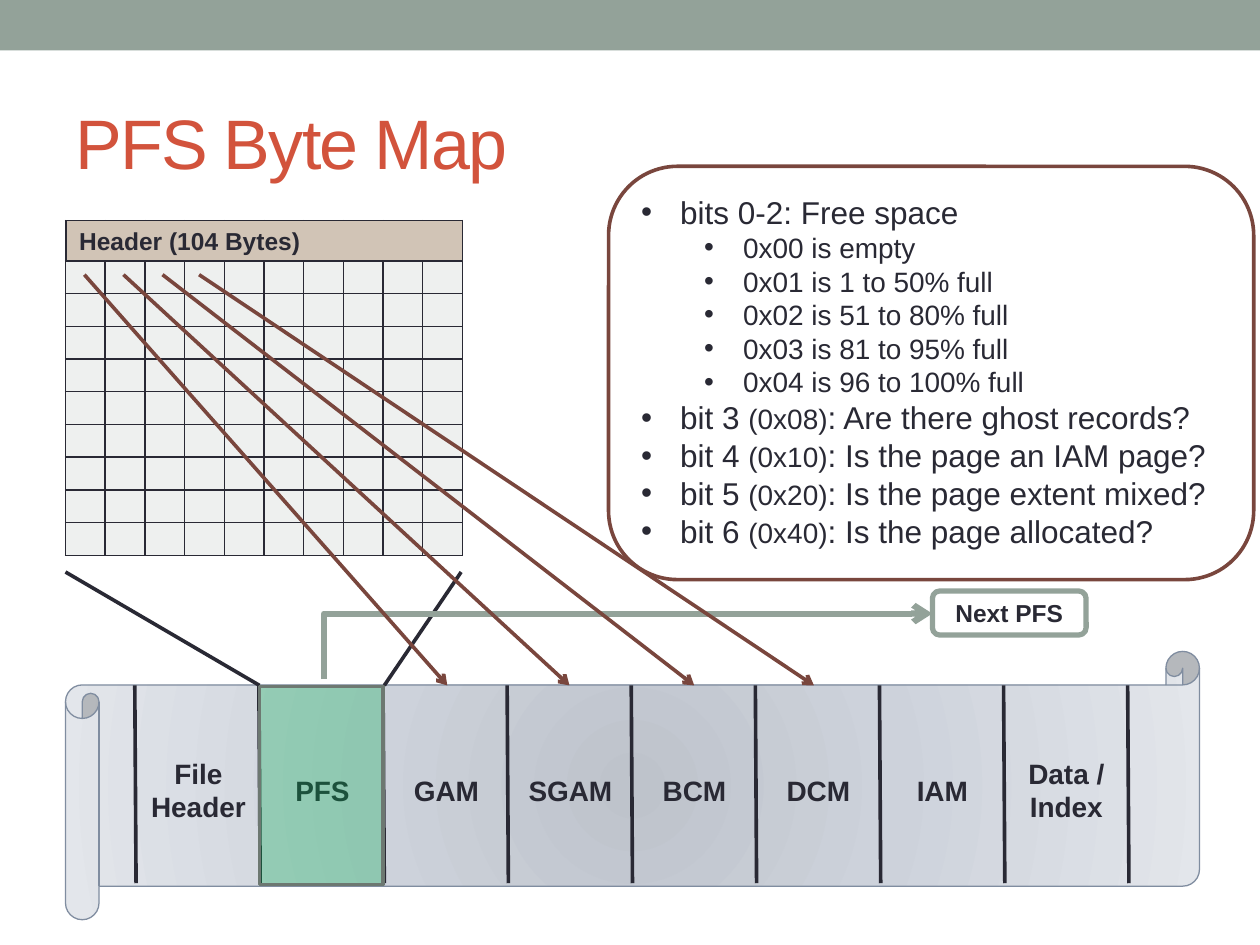
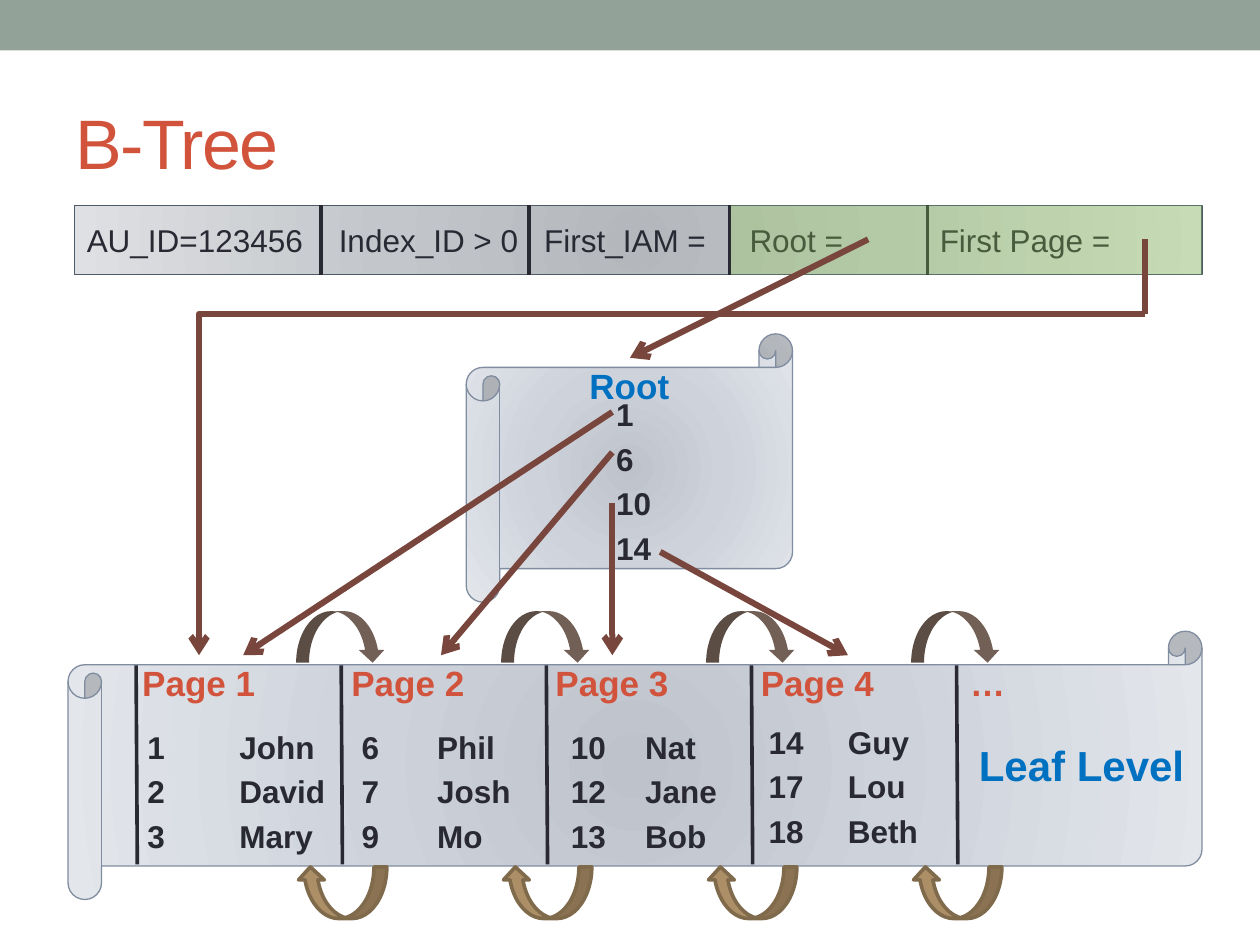
from lxml import etree
from pptx import Presentation
from pptx.dml.color import RGBColor
from pptx.enum.shapes import MSO_CONNECTOR, MSO_SHAPE
from pptx.enum.text import MSO_ANCHOR, PP_ALIGN
from pptx.oxml import parse_xml
from pptx.oxml.ns import nsdecls, qn
from pptx.util import Inches, Pt

STRAIGHT, ELBOW = MSO_CONNECTOR.STRAIGHT, MSO_CONNECTOR.ELBOW
RECT, ROUNDED = MSO_SHAPE.RECTANGLE, MSO_SHAPE.ROUNDED_RECTANGLE
SCROLL, CURVED_ARROW = MSO_SHAPE.HORIZONTAL_SCROLL, MSO_SHAPE.CURVED_DOWN_ARROW
LEFT, CENTER = PP_ALIGN.LEFT, PP_ALIGN.CENTER
TOP, MIDDLE = MSO_ANCHOR.TOP, MSO_ANCHOR.MIDDLE

FONT = "Arial"
INK, SAGE, RUST, BROWN = "292934", "93A299", "D2533C", "79463D"
BLUE, WHITE = "0070C0", "FFFFFF"
SCROLL_TINTS = ("BEC3CB", "CDD2DB", "E3E6EB")
RECORD_TINTS = ("B4B7BC", "C3C7CB", "DFE0E3")
NO_GRID_STYLE = "{2D5ABB26-0587-4C30-8999-92F81FD0307C}"

rgb = RGBColor.from_string


def write(paragraph, text, size, color=INK, bold=False):
    """Add one run to the paragraph."""
    run = paragraph.add_run()
    run.text = text
    run.font.name = FONT
    run.font.size = Pt(size)
    run.font.bold = bold
    run.font.color.rgb = rgb(color)
    return run


def connect(slide, start, end, color, width=2.08, arrow=False, kind=STRAIGHT):
    connector = slide.shapes.add_connector(kind, *map(Inches, start + end))
    connector.line.color.rgb = rgb(color)
    connector.line.width = Pt(width)
    if arrow:
        etree.SubElement(connector.get_or_add_ln(), qn("a:tailEnd"), type="arrow")
    etree.SubElement(connector.element.spPr, qn("a:effectLst"))
    return connector


prs = Presentation()
prs.slide_width, prs.slide_height = Inches(10), Inches(7.5)
title_only = prs.slide_layouts[5]

# Titles
slides = []
for heading in ("PFS Byte Map", "B-Tree"):
    slide = prs.slides.add_slide(title_only)
    title = slide.shapes.title
    title.left, title.top = Inches(0.5), Inches(0.58)
    title.width, title.height = Inches(9), Inches(1.08)
    title.text_frame.vertical_anchor = MIDDLE
    paragraph = title.text_frame.paragraphs[0]
    paragraph.alignment = LEFT
    run = write(paragraph, heading, 40, RUST)
    run._r.get_or_add_rPr().set("spc", "-100")
    slides.append(slide)
byte_map, b_tree = slides

# Top band, moved to the shared layout
band = byte_map.shapes.add_shape(RECT, 0, 0, Inches(10), Inches(0.4))
band.shadow.inherit = False
band.fill.solid()
band.fill.fore_color.rgb = rgb(SAGE)
band.line.fill.background()
title_only.shapes.element.insert(2, band.element)

# Scrolls and the allocation record, shaded from the centre
shaded = []
for slide, kind, at, tints, edge in (
    (byte_map, SCROLL, (0.52, 5.17, 9, 2.13), SCROLL_TINTS, "808DA0"),
    (b_tree, SCROLL, (0.54, 5.01, 9, 2.13), SCROLL_TINTS, "808DA0"),
    (b_tree, SCROLL, (3.7, 2.65, 2.59, 2.13), SCROLL_TINTS, "808DA0"),
    (b_tree, RECT, (0.59, 1.63, 8.95, 0.55), RECORD_TINTS, "4C5A6A"),
):
    shape = slide.shapes.add_shape(kind, *map(Inches, at))
    shape.shadow.inherit = False
    stops = "".join(
        f'<a:gs pos="{pos}"><a:srgbClr val="{tint}"/></a:gs>'
        for pos, tint in zip((0, 45000, 100000), tints)
    )
    shape.element.spPr.insert(2, parse_xml(
        f'<a:gradFill {nsdecls("a")} rotWithShape="1"><a:gsLst>{stops}</a:gsLst>'
        '<a:path path="circle"><a:fillToRect l="100000" t="100000" r="100000" b="100000"/>'
        "</a:path></a:gradFill>"
    ))
    shape.line.color.rgb = rgb(edge)
    shape.line.width = Pt(0.75)
    shaded.append(shape)
record = shaded[-1]

# Byte map: pages of the file
for i in range(9):
    x = 1.07 + 0.985 * i
    connect(byte_map, (x, 5.44), (x + 0.01, 7.01), INK)

pages = ("File\nHeader", "PFS", "GAM", "SGAM", "BCM", "DCM", "IAM", "Data / Index")
for i, page in enumerate(pages):
    label = byte_map.shapes.add_textbox(
        Inches(1.08 + 0.984 * i), Inches(5.95), Inches(0.99), Inches(0.64))
    frame = label.text_frame
    frame.word_wrap = True
    frame.vertical_anchor = MIDDLE
    for n, line in enumerate(page.split("\n")):
        paragraph = frame.add_paragraph() if n else frame.paragraphs[0]
        paragraph.alignment = CENTER
        write(paragraph, line, 16, bold=True)

# Byte map: grid of bytes
grid_frame = byte_map.shapes.add_table(
    10, 10, Inches(0.52), Inches(1.75), Inches(3.15), Inches(2.67))
grid = grid_frame.table
grid.first_row = grid.horz_banding = False
for row in grid.rows:
    row.height = Inches(0.26)
grid.rows[0].height = Inches(0.32)
for cell in grid.iter_cells():
    cell.margin_left = cell.margin_right = cell.margin_top = cell.margin_bottom = 0
    cell.fill.solid()
    cell.fill.fore_color.rgb = rgb("EEF0EF")
for paragraph in grid_frame.element.iter(qn("a:p")):
    etree.SubElement(paragraph, qn("a:endParaRPr"), sz="1000")
for cell_format in grid_frame.element.iter(qn("a:tcPr")):
    for i, side in enumerate(("lnL", "lnR", "lnT", "lnB")):
        cell_format.insert(i, parse_xml(
            f'<a:{side} {nsdecls("a")} w="12700"><a:solidFill>'
            f'<a:srgbClr val="{INK}"/></a:solidFill></a:{side}>'))

# Byte map: zoom lines, next page, and one byte per page
connect(byte_map, (2.06, 5.44), (0.52, 4.54), INK)
connect(byte_map, (3.05, 5.44), (3.66, 4.54), INK)
next_page = connect(byte_map, (2.57, 5.39), (7.4, 4.87), SAGE, 3.5, True, ELBOW)
bend = next(next_page.element.iter(qn("a:avLst")))
etree.SubElement(bend, qn("a:gd"), name="adj1", fmla="val 0")
for byte_x, page_x in zip((0.67, 0.98, 1.29, 1.58), (3.55, 4.52, 5.51, 6.46)):
    connect(byte_map, (byte_x, 2.18), (page_x, 5.44), BROWN, arrow=True)

# B-tree: page dividers and record fields
for i in range(5):
    x = 1.08 + 1.628 * i
    connect(b_tree, (x, 5.28), (x + 0.01, 6.86), INK)
for x in (2.55, 4.2, 5.79, 7.36):
    connect(b_tree, (x, 1.63), (x, 2.18), INK)

record.text_frame.vertical_anchor = MIDDLE
fields = record.text_frame.paragraphs[0]
fields.alignment = LEFT
tabs = etree.SubElement(fields._p.get_or_add_pPr(), qn("a:tabLst"))
for stop in (2, 3.63, 5.26, 6.77):
    etree.SubElement(tabs, qn("a:tab"), pos=str(Inches(stop)), algn="l")
write(fields, "AU_ID=123456\tIndex_ID > 0\tFirst_IAM =\tRoot =\tFirst Page =", 18)

for text, x, y, width, size, color in (
    ("Page 1", 1.03, 5.2, 1.11, 20, RUST),
    ("Page 2", 2.69, 5.2, 1.11, 20, RUST),
    ("Page 3", 4.31, 5.2, 1.11, 20, RUST),
    ("Page 4", 5.94, 5.2, 1.11, 20, RUST),
    ("…", 7.6, 5.2, 0.48, 20, RUST),
    ("Root", 4.58, 2.84, 0.84, 20, BLUE),
    ("Leaf Level", 7.67, 5.82, 1.85, 24, BLUE),
):
    label = b_tree.shapes.add_textbox(*map(Inches, (x, y, width, size * 0.022)))
    label.text_frame.word_wrap = False
    write(label.text_frame.paragraphs[0], text, size, color, True)

# B-tree: keys and names
for x, y, column, rows in (
    (1.17, 5.76, 0.73, (("1", "John"), ("2", "David"), ("3", "Mary"))),
    (2.87, 5.76, 0.6, (("6", "Phil"), ("7", "Josh"), ("9", "Mo"))),
    (4.53, 5.76, 0.59, (("10", "Nat"), ("12", "Jane"), ("13", "Bob"))),
    (6.1, 5.72, 0.63, (("14", "Guy"), ("17", "Lou"), ("18", "Beth"))),
    (4.89, 3.12, 0.45, (("1", ""), ("6", ""), ("10", ""), ("14", ""))),
):
    entries_frame = b_tree.shapes.add_table(
        len(rows), 2, *map(Inches, (x, y, 2 * column, 0.355 * len(rows))))
    next(entries_frame.element.iter(qn("a:tableStyleId"))).text = NO_GRID_STYLE
    entries = entries_frame.table
    entries.first_row = entries.horz_banding = False
    for r, row in enumerate(rows):
        for c, text in enumerate(row):
            cell = entries.cell(r, c)
            cell.margin_left = cell.margin_right = cell.margin_top = cell.margin_bottom = 0
            cell.vertical_anchor = MIDDLE
            cell.fill.background()
            if text:
                write(cell.text_frame.paragraphs[0], text, 18, bold=True)

# Plain shapes in front: slide, shape, place, fill, opacity, line, line width, text
front = [
    (byte_map, RECT, (2.06, 5.45, 0.98, 1.57), "00B050", 30, "6D7871", 2.08, ""),
    (byte_map, RECT, (0.53, 1.75, 3.14, 0.32), "D1C4B6", 100, INK, 0.75, "Header (104 Bytes)"),
    (byte_map, ROUNDED, (7.4, 4.69, 1.22, 0.35), WHITE, 100, SAGE, 3, "Next PFS"),
    (byte_map, ROUNDED, (4.83, 1.32, 5.12, 3.28), WHITE, 100, BROWN, 2.08, ""),
    (b_tree, RECT, (5.8, 1.63, 3.74, 0.55), "92D050", 30, None, 0, ""),
]
for i in range(4):
    x = 2.35 + 1.627 * i
    front.append((b_tree, CURVED_ARROW, (x, 4.85, 0.71, 0.41), "726056", 100, None, 0, ""))
    front.append((b_tree, CURVED_ARROW, (x + 0.01, 6.88, 0.71, 0.41),
                  "AD8F67", 100, "806A4C", 2.08, ""))
for slide, kind, at, fill, opacity, edge, width, text in front:
    shape = slide.shapes.add_shape(kind, *map(Inches, at))
    shape.shadow.inherit = False
    shape.fill.solid()
    shape.fill.fore_color.rgb = rgb(fill)
    if opacity < 100:
        tint = next(shape.element.iter(qn("a:srgbClr")))
        etree.SubElement(tint, qn("a:alpha"), val=str(opacity * 1000))
    if edge:
        shape.line.color.rgb = rgb(edge)
        shape.line.width = Pt(width)
    else:
        shape.line.fill.background()
    if kind == CURVED_ARROW and edge:
        shape.rotation = 180
    if text:
        shape.text_frame.margin_top = shape.text_frame.margin_bottom = Inches(0.04)
        shape.text_frame.vertical_anchor = TOP
        paragraph = shape.text_frame.paragraphs[0]
        paragraph.alignment = CENTER if kind == ROUNDED else LEFT
        write(paragraph, text, 14, bold=True)
    if slide is byte_map:
        bit_legend = shape

# Byte map: meaning of the bits
bits = [(0, (("bits 0-2: Free space", 18),))]
for meaning in ("0x00 is empty", "0x01 is 1 to 50% full", "0x02 is 51 to 80% full",
                "0x03 is 81 to 95% full", "0x04 is 96 to 100% full"):
    bits.append((1, ((meaning, 16),)))
for bit, mask, question in (
    ("bit 3 ", "(0x08)", ": Are there ghost records?"),
    ("bit 4 ", "(0x10)", ": Is the page an IAM page?"),
    ("bit 5 ", "(0x20)", ": Is the page extent mixed?"),
    ("bit 6 ", "(0x40)", ": Is the page allocated?"),
):
    bits.append((0, ((bit, 18), (mask, 16), (question, 18))))

frame = bit_legend.text_frame
frame.vertical_anchor = TOP
for n, (level, parts) in enumerate(bits):
    paragraph = frame.add_paragraph() if n else frame.paragraphs[0]
    paragraph.alignment = LEFT
    paragraph.level = level
    layout = paragraph._p.get_or_add_pPr()
    layout.set("marL", str(Inches(0.31 + 0.5 * level)))
    layout.set("indent", str(Inches(-0.31)))
    etree.SubElement(layout, qn("a:buFont"), typeface=FONT)
    etree.SubElement(layout, qn("a:buChar"), char="•")
    for text, size in parts:
        write(paragraph, text, size)

# B-tree: pointers from the record to the pages
first_page = connect(b_tree, (9.09, 2.49), (1.58, 5.2), BROWN, 3.5, True, ELBOW)
next(first_page.element.iter(qn("a:prstGeom"))).set("prst", "bentConnector2")
connect(b_tree, (9.09, 2.49), (9.09, 1.9), BROWN, 3.5)
for start, end in (
    ((6.89, 1.9), (5, 2.84)),
    ((4.86, 3.27), (1.93, 5.2)),
    ((4.86, 3.59), (3.5, 5.2)),
    ((4.86, 3.99), (4.86, 5.2)),
    ((5.24, 4.38), (6.73, 5.2)),
):
    connect(b_tree, start, end, BROWN, 3.5, True)

prs.save("out.pptx")
